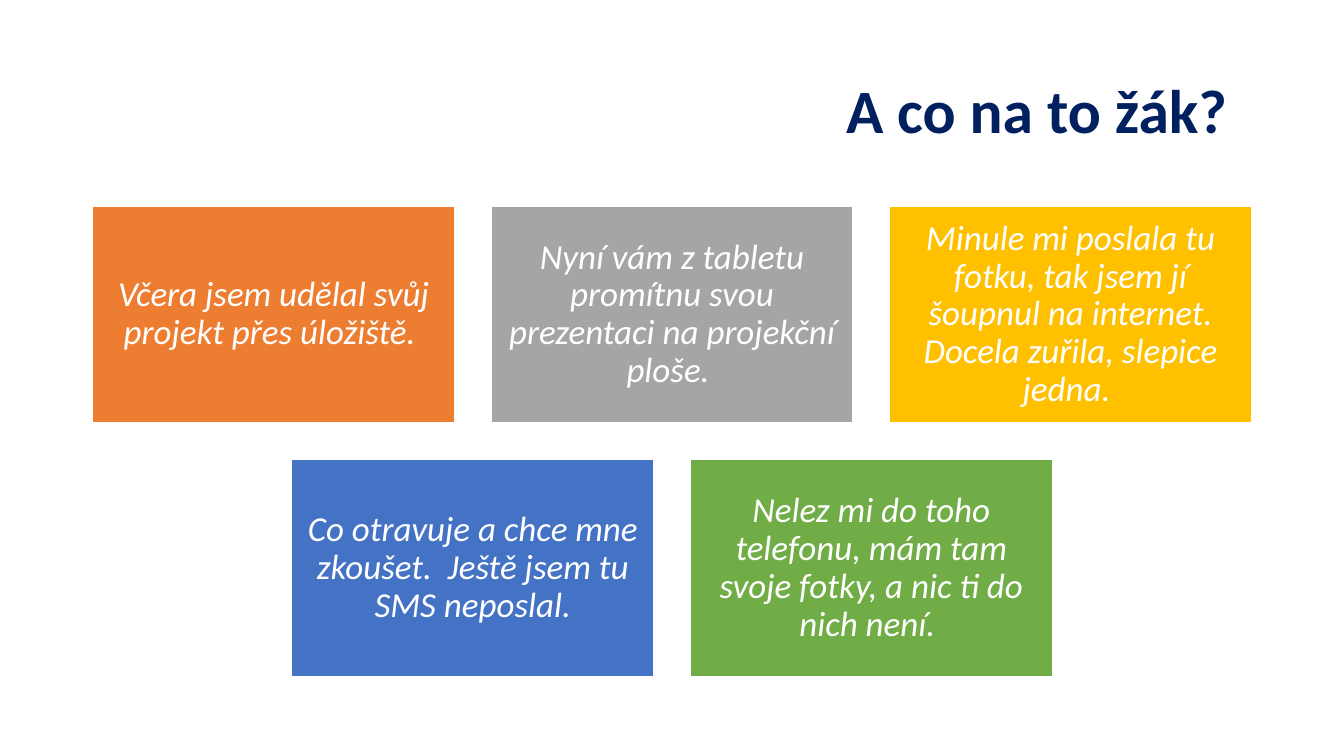
from pptx import Presentation
from pptx.dml.color import RGBColor
from pptx.enum.shapes import MSO_SHAPE
from pptx.enum.text import MSO_ANCHOR, PP_ALIGN
from pptx.util import Pt

COLORS = {
    "navy": "002060",
    "white": "FFFFFF",
    "orange": "ED7D31",
    "gray": "A5A5A5",
    "gold": "FFC000",
    "blue": "4472C4",
    "green": "70AD47",
}
SLIDE_W, SLIDE_H = 960, 540
CARD_W, CARD_H, GAP = 258.75, 155.25, 25.87
CARDS_TOP = 147
ROWS = [
    [
        ("orange", "Včera jsem udělal svůj projekt přes úložiště. "),
        ("gray", "Nyní vám z tabletu promítnu svou prezentaci na projekční ploše. "),
        ("gold", "Minule mi poslala tu fotku, tak jsem jí šoupnul na internet. "
                 "Docela zuřila, slepice jedna. "),
    ],
    [
        ("blue", "Co otravuje a chce mne zkoušet.  Ještě jsem tu SMS neposlal."),
        ("green", "Nelez mi do toho telefonu, mám tam svoje fotky, a nic ti do nich není. "),
    ],
]


def rgb(name):
    """Return the named colour."""
    return RGBColor.from_string(COLORS[name])


def write(tf, text, size, color, align, bold=False, italic=False):
    """Write one formatted run into a vertically centred text frame."""
    tf.word_wrap = True
    tf.vertical_anchor = MSO_ANCHOR.MIDDLE
    p = tf.paragraphs[0]
    p.alignment = align
    p.line_spacing = 0.9
    r = p.add_run()
    r.text = text
    r.font.name = "Calibri"
    r.font.size = Pt(size)
    r.font.bold = bold
    r.font.italic = italic
    r.font.color.rgb = rgb(color)


def add_title(s, text):
    """Place and fill the title placeholder."""
    sp = s.shapes.title
    sp.left, sp.top, sp.width, sp.height = Pt(66), Pt(28.75), Pt(828), Pt(104.4)
    write(sp.text_frame, text, 44, "navy", PP_ALIGN.RIGHT, bold=True)


def add_card(s, left, top, color, text):
    """Add a coloured rectangle with a quotation."""
    sp = s.shapes.add_shape(MSO_SHAPE.RECTANGLE, Pt(left), Pt(top), Pt(CARD_W), Pt(CARD_H))
    sp.shadow.inherit = False
    sp.fill.solid()
    sp.fill.fore_color.rgb = rgb(color)
    sp.line.color.rgb = rgb("white")
    sp.line.width = Pt(1)
    tf = sp.text_frame
    tf.margin_left = tf.margin_right = tf.margin_top = tf.margin_bottom = Pt(7.2)
    write(tf, text, 25, "white", PP_ALIGN.CENTER, italic=True)


def add_card_row(s, top, cards):
    """Add a row of cards centred on the slide."""
    pitch = CARD_W + GAP
    left = (SLIDE_W - len(cards) * pitch + GAP) / 2
    for i, (color, text) in enumerate(cards):
        add_card(s, left + i * pitch, top, color, text)


def main():
    """Build and save the slide."""
    prs = Presentation()
    prs.slide_width, prs.slide_height = Pt(SLIDE_W), Pt(SLIDE_H)
    s = prs.slides.add_slide(prs.slide_layouts[5])
    add_title(s, "A co na to žák? ")
    for i, cards in enumerate(ROWS):
        add_card_row(s, CARDS_TOP + i * (CARD_H + GAP), cards)
    prs.save("out.pptx")


if __name__ == "__main__":
    main()
